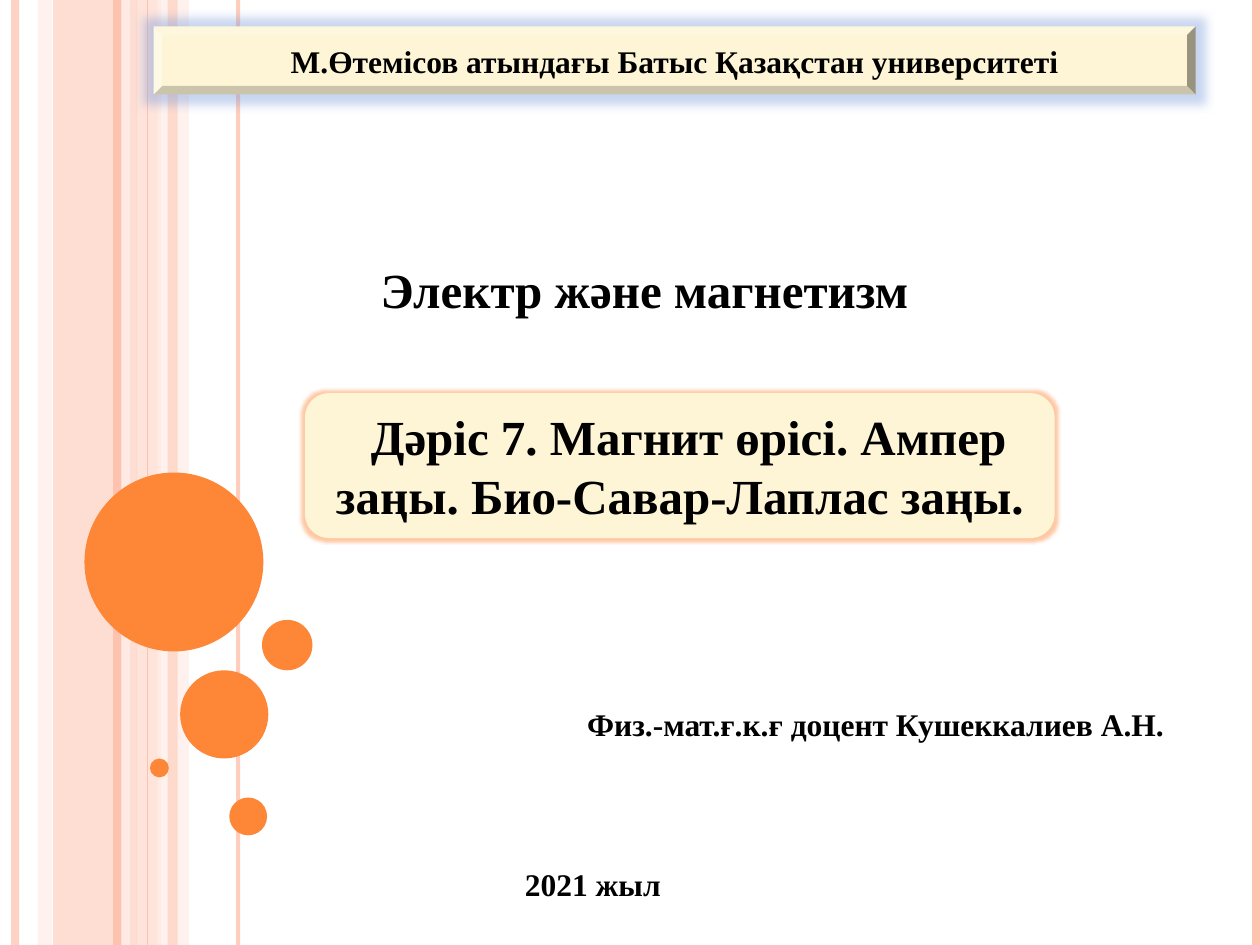
"""Build the title slide of a physics lecture on magnetism."""
from lxml import etree
from pptx import Presentation
from pptx import util as u
from pptx.dml.color import RGBColor
from pptx.enum import shapes, text
from pptx.oxml import ns

PEACH = RGBColor(0xFE, 0xC3, 0xAE)
LIGHT_PEACH = RGBColor(0xFF, 0xD9, 0xCE)
PALE_PEACH = RGBColor(0xFF, 0xED, 0xE8)
ORANGE = RGBColor(0xFE, 0x86, 0x37)
CREAM = RGBColor(0xFD, 0xF5, 0xD5)
BLUE = RGBColor(0x75, 0x98, 0xD9)
BLACK = RGBColor(0, 0, 0)
FONT = "Times New Roman"
HEIGHT = 7.5

BANDS = [
    (0.42, 0.67, PEACH, 54),
    (0.3, 0.11, LIGHT_PEACH, 36),
    (1.08, 0.2, LIGHT_PEACH, 70),
    (1.25, 0.25, PALE_PEACH, 71),
]
RULES = [
    (0.12, 4.5, PEACH, 73),
    (1, 4.5, PALE_PEACH, 83),
    (0.93, 4.5, PEACH, 100),
    (1.89, 2.25, PEACH, 82),
    (1.17, 0.75, PEACH, 100),
    (9.97, 4.5, PEACH, 100),
]
BUBBLES = [
    (0.67, 3.75, 1.42),
    (1.43, 5.32, 0.7),
    (1.19, 6.02, 0.15),
    (1.82, 6.33, 0.3),
    (2.08, 4.92, 0.4),
]


def add_alpha(parent, percent):
    """Set the opacity of the colour element inside parent."""
    color = parent.find(".//" + ns.qn("a:srgbClr"))
    etree.SubElement(color, ns.qn("a:alpha"), val=str(percent * 1000))


def add_filled(slide, kind, left, top, width, height, color, opacity=100):
    """Add a preset shape with a plain fill and no outline."""
    shape = slide.shapes.add_shape(
        kind, u.Inches(left), u.Inches(top), u.Inches(width), u.Inches(height))
    shape.shadow.inherit = False
    shape.fill.solid()
    shape.fill.fore_color.rgb = color
    shape.line.fill.background()
    if opacity < 100:
        add_alpha(shape._element.spPr.find(ns.qn("a:solidFill")), opacity)
    return shape


def add_band(slide, left, width, color, opacity):
    """Add a vertical band over the full slide height."""
    add_filled(slide, shapes.MSO_SHAPE.RECTANGLE, left, 0, width, HEIGHT, color, opacity)


def add_rule(slide, left, weight, color, opacity):
    """Add a vertical line over the full slide height."""
    rule = slide.shapes.add_connector(
        shapes.MSO_CONNECTOR.STRAIGHT,
        u.Inches(left), u.Inches(0), u.Inches(left), u.Inches(HEIGHT))
    rule.line.width = u.Pt(weight)
    rule.line.color.rgb = color
    properties = rule._element.spPr
    if opacity < 100:
        add_alpha(properties.find(ns.qn("a:ln")), opacity)
    etree.SubElement(properties, ns.qn("a:effectLst"))


def add_glow(shape, color, radius, opacity):
    """Put a soft glow around a shape."""
    effects = shape._element.spPr.find(ns.qn("a:effectLst"))
    glow = etree.SubElement(effects, ns.qn("a:glow"), rad=str(u.Pt(radius)))
    etree.SubElement(glow, ns.qn("a:srgbClr"), val=str(color))
    add_alpha(glow, opacity)


def write(shape, content, size=18, wrap=True, indent=0):
    """Write one bold centred paragraph into a shape."""
    frame = shape.text_frame
    frame.word_wrap = wrap
    frame.auto_size = text.MSO_AUTO_SIZE.SHAPE_TO_FIT_TEXT
    para = frame.paragraphs[0]
    para.alignment = text.PP_ALIGN.CENTER
    if indent:
        para._p.get_or_add_pPr().set("indent", str(u.Inches(indent)))
    span = para.add_run()
    span.text = content
    span.font.name = FONT
    span.font.size = u.Pt(size)
    span.font.bold = True
    span.font.color.rgb = BLACK


def add_label(slide, left, top, width, height, content, **style):
    """Add a text box holding one line."""
    box = slide.shapes.add_textbox(
        u.Inches(left), u.Inches(top), u.Inches(width), u.Inches(height))
    write(box, content, **style)


def main():
    """Build and save the deck."""
    deck = Presentation()
    deck.slide_width, deck.slide_height = u.Inches(10), u.Inches(HEIGHT)
    slide = deck.slides.add_slide(deck.slide_layouts[6])

    for band in BANDS:
        add_band(slide, *band)
    for rule in RULES:
        add_rule(slide, *rule)
    add_band(slide, 1.33, 0.08, PEACH, 51)
    for left, top, size in BUBBLES:
        add_filled(slide, shapes.MSO_SHAPE.OVAL, left, top, size, size, ORANGE)

    banner = add_filled(slide, shapes.MSO_SHAPE.BEVEL, 1.22, 0.21, 8.27, 0.54, CREAM)
    add_glow(banner, BLUE, 11, 40)
    write(banner, "М.Өтемісов атындағы Батыс Қазақстан университеті")
    topic = add_filled(slide, shapes.MSO_SHAPE.FLOWCHART_ALTERNATE_PROCESS,
                       2.42, 3.12, 5.95, 1.15, CREAM)
    add_glow(topic, ORANGE, 4, 45)
    write(topic, "Дәріс 7. Магнит өрісі. Ампер заңы. Био-Савар-Лаплас заңы.",
          size=28, indent=0.14)

    add_label(slide, 4.06, 6.82, 1.29, 0.4, "2021 жыл", wrap=False)
    add_label(slide, 1.1, 2.01, 8.03, 0.57, "Электр және магнетизм", size=28)
    add_label(slide, 3.92, 5.55, 6.06, 0.4, "Физ.-мат.ғ.к.ғ доцент Кушеккалиев А.Н.")
    deck.save("out.pptx")


if __name__ == "__main__":
    main()
